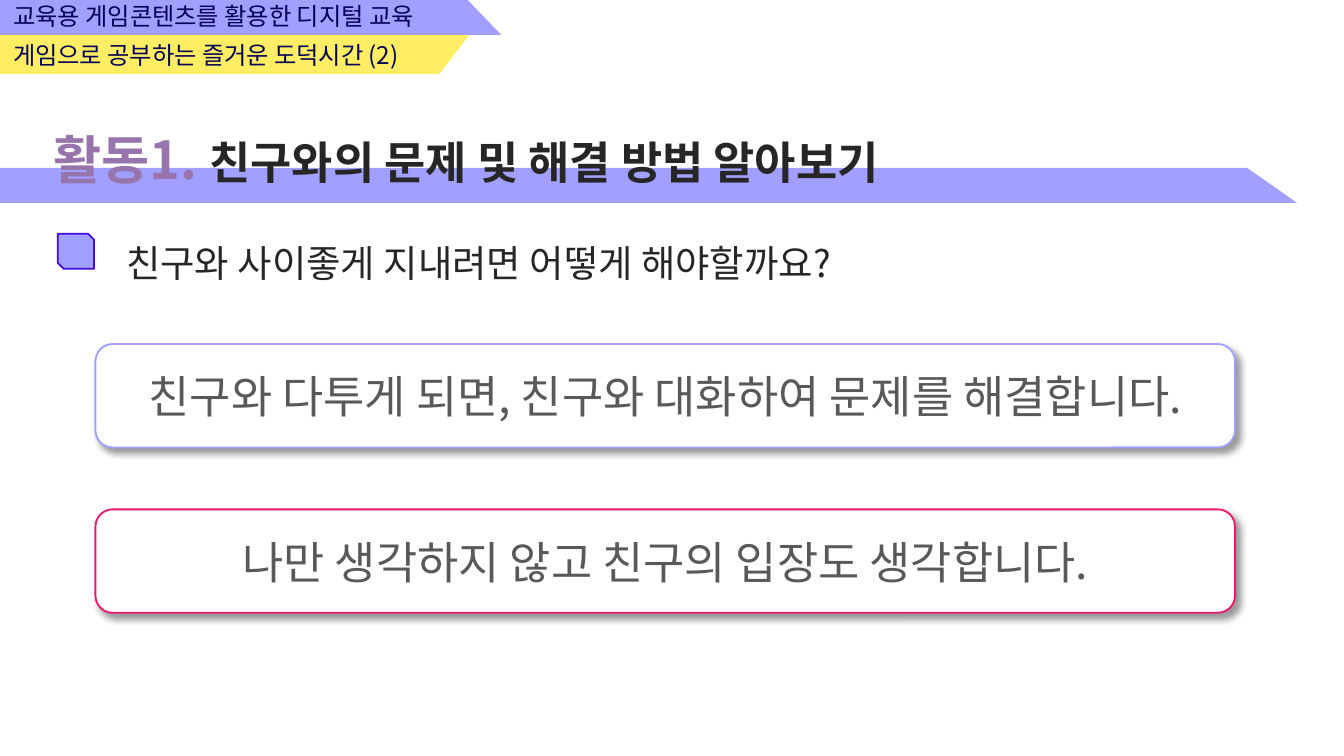
from dataclasses import dataclass

import lxml.etree
import pptx
import pptx.dml.color
import pptx.enum.shapes
import pptx.enum.text
import pptx.oxml.ns
import pptx.util

SLIDE_WIDTH = pptx.util.Inches(10)
SLIDE_HEIGHT = pptx.util.Inches(5.625)
COLUMN = SLIDE_WIDTH / 100
ROW = SLIDE_HEIGHT / 56.25
FONT = "Noto Sans CJK KR"
COLORS = {
    "lavender": "A19FFF",
    "yellow": "FFEE63",
    "navy": "040257",
    "mauve": "9774AB",
    "ink": "262626",
    "gray": "595959",
    "violet": "440BD4",
    "pink": "EA1A6E",
    "white": "FFFFFF",
    "black": "000000",
}
ALIGN = pptx.enum.text.PP_ALIGN
ANCHOR = pptx.enum.text.MSO_ANCHOR
SHAPE = pptx.enum.shapes.MSO_SHAPE


@dataclass(frozen=True)
class Box:
    column: float
    row: float
    columns: float
    rows: float

    def lengths(self) -> tuple[int, int, int, int]:
        return (round(self.column * COLUMN), round(self.row * ROW),
                round(self.columns * COLUMN), round(self.rows * ROW))


@dataclass(frozen=True)
class Ribbon:
    top: float
    bottom: float
    top_end: float
    bottom_end: float
    color: str


@dataclass(frozen=True)
class Words:
    text: str
    size: int
    color: str
    bold: bool = False


@dataclass(frozen=True)
class Label:
    box: Box
    words: Words
    line_spacing: float = 1.0


@dataclass(frozen=True)
class Answer:
    row: float
    text: str
    border: str


def rgb(name: str) -> pptx.dml.color.RGBColor:
    return pptx.dml.color.RGBColor.from_string(COLORS[name])


def add_words(paragraph, words: Words) -> None:
    run = paragraph.add_run()
    run.text = words.text
    run.font.name = FONT
    run.font.size = pptx.util.Pt(words.size)
    run.font.bold = words.bold
    run.font.color.rgb = rgb(words.color)
    east_asian = lxml.etree.SubElement(run.font._element, pptx.oxml.ns.qn("a:ea"))
    east_asian.set("typeface", FONT)


def draw_ribbon(slide, ribbon: Ribbon) -> None:
    top, bottom = ribbon.top * ROW, ribbon.bottom * ROW
    builder = slide.shapes.build_freeform(0, round(top))
    builder.add_line_segments([
        (round(ribbon.top_end * COLUMN), round(top)),
        (round(ribbon.bottom_end * COLUMN), round(bottom)),
        (0, round(bottom)),
    ], close=True)
    shape = builder.convert_to_shape()
    shape.shadow.inherit = False
    shape.fill.solid()
    shape.fill.fore_color.rgb = rgb(ribbon.color)
    shape.line.fill.background()


def draw_label(slide, label: Label) -> None:
    frame = slide.shapes.add_textbox(*label.box.lengths()).text_frame
    frame.word_wrap = True
    paragraph = frame.paragraphs[0]
    paragraph.line_spacing = label.line_spacing
    add_words(paragraph, label.words)


def draw_outlined(slide, kind, box: Box, fill: str, border: str):
    shape = slide.shapes.add_shape(kind, *box.lengths())
    shape.shadow.inherit = False
    shape.fill.solid()
    shape.fill.fore_color.rgb = rgb(fill)
    shape.line.color.rgb = rgb(border)
    shape.line.width = pptx.util.Pt(1)
    return shape


def add_shadow(shape) -> None:
    qn = pptx.oxml.ns.qn
    effects = shape._element.spPr.find(qn("a:effectLst"))
    shadow = lxml.etree.SubElement(effects, qn("a:outerShdw"))
    shadow.set("blurRad", str(pptx.util.Pt(4)))
    shadow.set("dist", str(pptx.util.Pt(3)))
    shadow.set("dir", str(45 * 60000))
    shadow.set("algn", "tl")
    shadow.set("rotWithShape", "0")
    color = lxml.etree.SubElement(shadow, qn("a:srgbClr"))
    color.set("val", COLORS["black"])
    lxml.etree.SubElement(color, qn("a:alpha")).set("val", "40000")


def draw_answer(slide, answer: Answer) -> None:
    box = Box(7.1, answer.row, 84.8, 7.7)
    shape = draw_outlined(slide, SHAPE.ROUNDED_RECTANGLE, box, "white", answer.border)
    add_shadow(shape)
    frame = shape.text_frame
    frame.word_wrap = True
    frame.vertical_anchor = ANCHOR.MIDDLE
    paragraph = frame.paragraphs[0]
    paragraph.alignment = ALIGN.CENTER
    add_words(paragraph, Words(answer.text, 24, "gray"))


def write_title(slide, box: Box, parts: list[Words]) -> None:
    title = slide.shapes.title
    title.left, title.top, title.width, title.height = box.lengths()
    frame = title.text_frame
    frame.word_wrap = True
    frame.auto_size = pptx.enum.text.MSO_AUTO_SIZE.NONE
    frame.vertical_anchor = ANCHOR.TOP
    paragraph = frame.paragraphs[0]
    paragraph.alignment = ALIGN.LEFT
    for words in parts:
        add_words(paragraph, words)
    slide.shapes._spTree.append(title._element)


RIBBONS = [
    Ribbon(2.6, 5.5, 34.9, 32.7, "yellow"),
    Ribbon(0, 2.6, 34.8, 37.3, "lavender"),
    Ribbon(12.5, 15.1, 92.8, 96.5, "lavender"),
]
LABELS = [
    Label(Box(0, 2.5, 33.3, 3.2), Words("게임으로 공부하는 즐거운 도덕시간 (2)", 13, "navy")),
    Label(Box(0, -0.4, 34.9, 3.2), Words("교육용 게임콘텐츠를 활용한 디지털 교육", 13, "navy")),
    Label(Box(8.4, 16.4, 92.1, 5.1),
          Words("친구와 사이좋게 지내려면 어떻게 해야할까요?", 20, "ink"), 1.3),
]
TITLE = [
    Words("활동1. ", 28, "mauve", True),
    Words("친구와의 문제 및 해결 방법 알아보기", 24, "ink", True),
]
ANSWERS = [
    Answer(25.6, "친구와 다투게 되면, 친구와 대화하여 문제를 해결합니다.", "lavender"),
    Answer(37.9, "나만 생각하지 않고 친구의 입장도 생각합니다.", "pink"),
]


def main() -> None:
    presentation = pptx.Presentation()
    presentation.slide_width = SLIDE_WIDTH
    presentation.slide_height = SLIDE_HEIGHT
    slide = presentation.slides.add_slide(presentation.slide_layouts[5])
    for ribbon in RIBBONS:
        draw_ribbon(slide, ribbon)
    write_title(slide, Box(3, 9, 94.5, 5.7), TITLE)
    for label in LABELS:
        draw_label(slide, label)
    draw_outlined(slide, SHAPE.SNIP_2_DIAG_RECTANGLE, Box(4.3, 17.4, 2.7, 2.6),
                  "lavender", "violet")
    for answer in ANSWERS:
        draw_answer(slide, answer)
    presentation.save("out.pptx")


if __name__ == "__main__":
    main()
